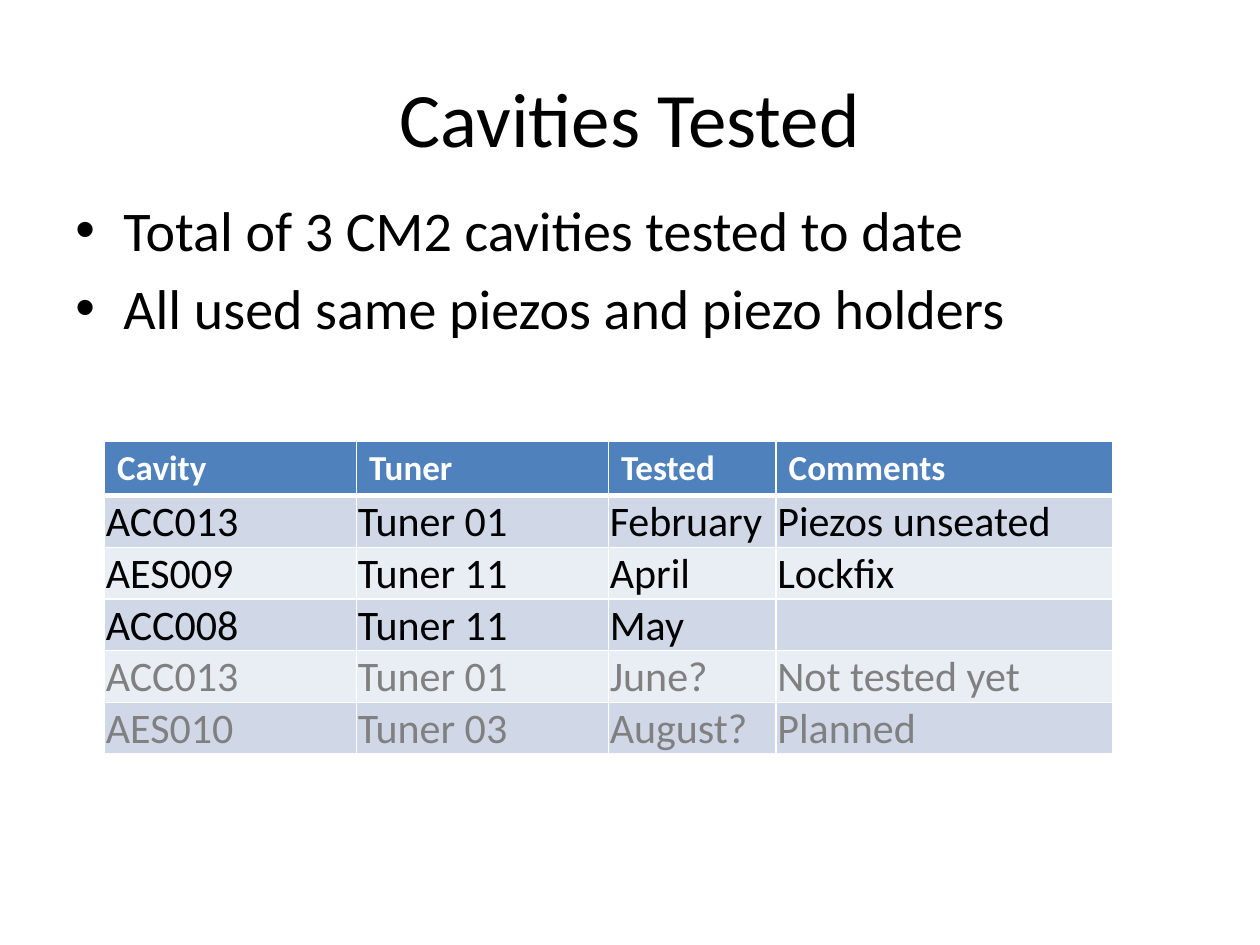
from pptx import Presentation
from pptx.dml.color import RGBColor
from pptx.enum.text import MSO_ANCHOR as Anchor, PP_ALIGN as Align
from pptx.oxml.ns import qn
from pptx.util import Inches, Pt
from lxml.etree import SubElement

# Content
TITLE = "Cavities Tested"
BULLETS = [
    "Total of 3 CM2 cavities tested to date",
    "All used same piezos and piezo holders",
]
HEADER = ["Cavity", "Tuner", "Tested", "Comments"]
TESTED = [
    ["ACC013", "Tuner 01", "February", "Piezos unseated"],
    ["AES009", "Tuner 11", "April", "Lockfix"],
    ["ACC008", "Tuner 11", "May", ""],
]
PENDING = [
    ["ACC013", "Tuner 01", "June?", "Not tested yet"],
    ["AES010", "Tuner 03", "August?", "Planned"],
]
COLUMN_WIDTHS = [2, 2, 1.33, 2.67]
ROW_HEIGHT = 0.41
FONT = "Calibri"
COLORS = {
    "text": "000000", "pending": "808080", "white": "FFFFFF",
    "header": "4F81BD", "odd": "D0D8E8", "even": "E9EDF4",
}


def rgb(name):
    return RGBColor.from_string(COLORS[name])


def style(para, size, color, bold=False):
    font = para.font
    font.name, font.size, font.bold = FONT, Pt(size), bold
    font.color.rgb = rgb(color)


def add_text(page, left, top, width, height, lines, size):
    box = page.shapes.add_textbox(*map(Inches, (left, top, width, height)))
    frame = box.text_frame
    frame.word_wrap = True
    frame.text = "\n".join(lines)
    for para in frame.paragraphs:
        style(para, size, "text")
    return frame


def add_bullet(para):
    props = para._p.get_or_add_pPr()
    props.set("marL", str(Inches(0.38)))
    props.set("indent", str(Inches(-0.38)))
    bullet_font = props.makeelement(qn("a:buFont"), {"typeface": "Arial"})
    bullet = props.makeelement(qn("a:buChar"), {"char": "•"})
    defaults = props.find(qn("a:defRPr"))
    defaults.addprevious(bullet_font)
    defaults.addprevious(bullet)


def set_borders(cell, widths):
    props = cell._tc.get_or_add_tcPr()
    for index, (side, width) in enumerate(widths.items()):
        line = props.makeelement(qn(f"a:ln{side}"), {"w": str(Pt(width))})
        fill = SubElement(line, qn("a:solidFill"))
        SubElement(fill, qn("a:srgbClr"), val=COLORS["white"])
        props.insert(index, line)


def fill_cell(cell, text, row):
    is_header = row == 0
    cell.text = text
    cell.fill.solid()
    cell.fill.fore_color.rgb = rgb("header" if is_header else "odd" if row % 2 else "even")
    para = cell.text_frame.paragraphs[0]
    if is_header:
        style(para, 20, "white", bold=True)
    else:
        style(para, 24, "pending" if row > len(TESTED) else "text")
        cell.vertical_anchor = Anchor.BOTTOM
        cell.margin_left = cell.margin_top = cell.margin_right = Inches(0.01)
        cell.margin_bottom = 0
    set_borders(cell, {"L": 1, "R": 1, "T": 3 if row == 1 else 1, "B": 3 if is_header else 1})


def main():
    deck = Presentation()
    deck.slide_width, deck.slide_height = Inches(10), Inches(7.5)
    page = deck.slides.add_slide(deck.slide_layouts[6])

    # Title
    title = add_text(page, 0.5, 0.3, 9, 1.25, [TITLE], 44)
    title.vertical_anchor = Anchor.MIDDLE
    title.paragraphs[0].alignment = Align.CENTER

    # Bullets
    body = add_text(page, 0.5, 1.5, 8.92, 1.7, BULLETS, 32)
    for para in body.paragraphs:
        para.space_before = Pt(6.4)
        add_bullet(para)

    # Table of cavities
    rows = [HEADER, *TESTED, *PENDING]
    table = page.shapes.add_table(
        len(rows), len(HEADER), Inches(0.83), Inches(3.5),
        Inches(sum(COLUMN_WIDTHS)), Inches(ROW_HEIGHT * len(rows))).table
    for column, width in zip(table.columns, COLUMN_WIDTHS):
        column.width = Inches(width)
    for row, texts in enumerate(rows):
        table.rows[row].height = Inches(ROW_HEIGHT)
        for column, text in enumerate(texts):
            fill_cell(table.cell(row, column), text, row)

    deck.save("out.pptx")


if __name__ == "__main__":
    main()
